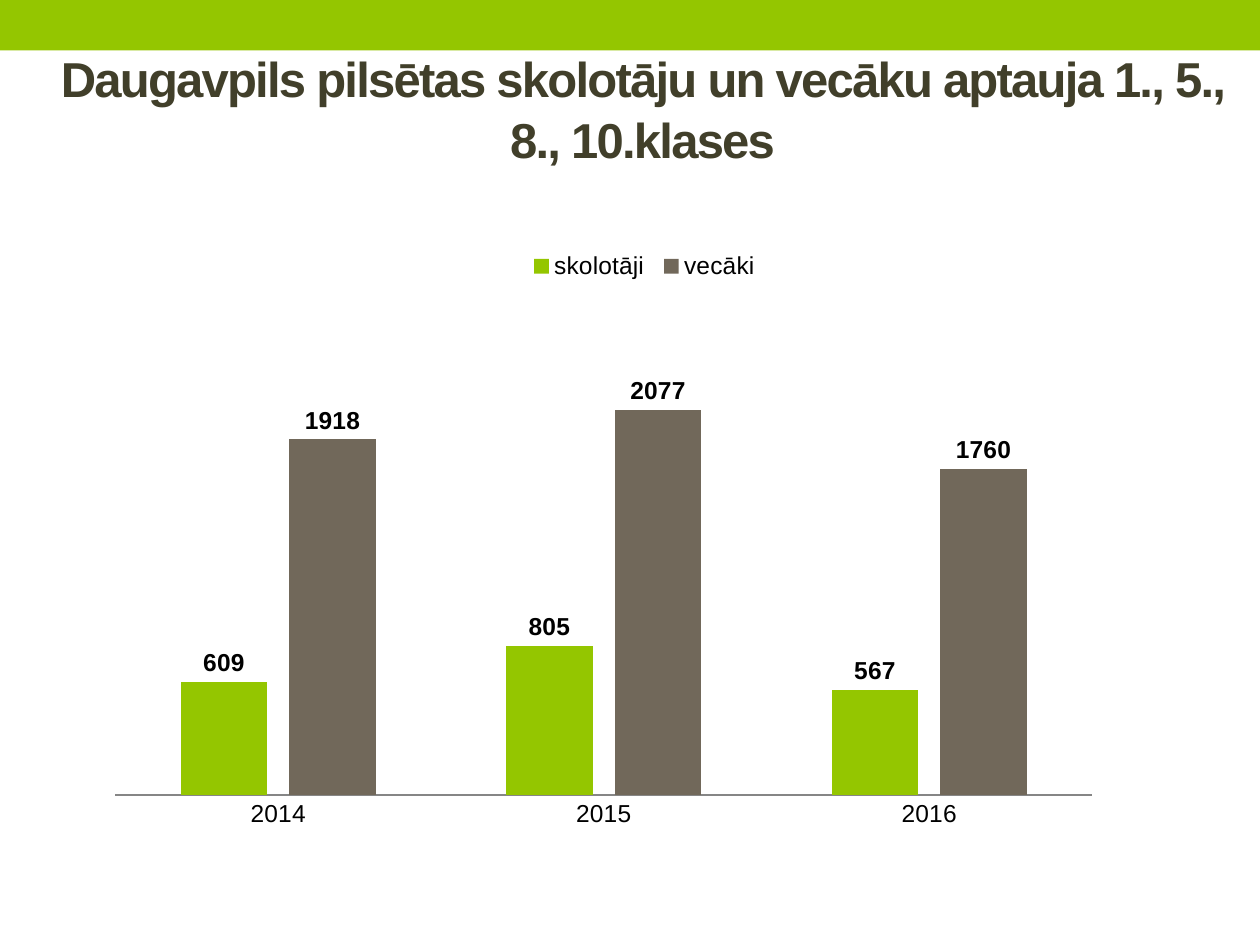
import pptx
import pptx.chart.data
import pptx.dml.color
import pptx.enum.chart
import pptx.enum.shapes
import pptx.enum.text
import pptx.oxml
import pptx.oxml.ns
import pptx.util

Pt = pptx.util.Pt
RGB = pptx.dml.color.RGBColor
GREEN = RGB(0x94, 0xC6, 0x00)
TAUPE = RGB(0x71, 0x68, 0x5A)
OLIVE = RGB(0x41, 0x3F, 0x2A)
GRAY = RGB(0x86, 0x86, 0x86)
BLACK = RGB(0, 0, 0)
FONT = "Arial"

YEARS = ["2014", "2015", "2016"]
SERIES = [("skolotāji", [609, 805, 567], GREEN),
          ("vecāki", [1918, 2077, 1760], TAUPE)]


def format_font(font, size, color=BLACK, bold=False):
    font.name, font.size, font.bold = FONT, Pt(size), bold
    font.color.rgb = color


def add_text(s, box, text, size, color, bold=False, spacing=0, line_spacing=1.0):
    """Add centred text; spacing is the letter spacing in points."""
    tf = s.shapes.add_textbox(*map(Pt, box)).text_frame
    tf.word_wrap = True
    tf.vertical_anchor = pptx.enum.text.MSO_ANCHOR.MIDDLE
    p = tf.paragraphs[0]
    p.alignment = pptx.enum.text.PP_ALIGN.CENTER
    p.line_spacing = line_spacing
    r = p.add_run()
    r.text = text
    format_font(r.font, size, color, bold)
    r.font._element.set("spc", str(int(spacing * 100)))


def add_band(s, box):
    sp = s.shapes.add_shape(pptx.enum.shapes.MSO_SHAPE.RECTANGLE, *map(Pt, box))
    sp.shadow.inherit = False
    sp.fill.solid()
    sp.fill.fore_color.rgb = GREEN
    sp.line.fill.background()


def set_layout(element, x, y, w, h, inner=False):
    """Place a chart part by fractions of the chart's width and height."""
    for old in element.findall(pptx.oxml.ns.qn("c:layout")):
        element.remove(old)
    target = '<c:layoutTarget val="inner"/>' if inner else ""
    layout = pptx.oxml.parse_xml(
        f'<c:layout {pptx.oxml.ns.nsdecls("c")}><c:manualLayout>{target}'
        '<c:xMode val="edge"/><c:yMode val="edge"/>'
        f'<c:x val="{x}"/><c:y val="{y}"/><c:w val="{w}"/><c:h val="{h}"/>'
        '</c:manualLayout></c:layout>')
    # The layout leads the plot area, and follows the legend's position.
    element.insert(0 if inner else 1, layout)


def add_survey_chart(s, box):
    data = pptx.chart.data.CategoryChartData()
    data.categories = YEARS
    for name, values, _ in SERIES:
        data.add_series(name, values)
    chart = s.shapes.add_chart(pptx.enum.chart.XL_CHART_TYPE.COLUMN_CLUSTERED,
                               *map(Pt, box), data).chart
    format_font(chart.font, 10)
    chart.has_title = False

    chart.has_legend = True
    legend = chart.legend
    legend.position = pptx.enum.chart.XL_LEGEND_POSITION.TOP
    legend.include_in_layout = False
    format_font(legend.font, 14)
    set_layout(legend._element, 0.4, 0.05, 0.24, 0.06)

    plot = chart.plots[0]
    plot.gap_width, plot.overlap = 150, -25
    plot.vary_by_categories = False
    for series, (_, _, color) in zip(plot.series, SERIES):
        series.format.fill.solid()
        series.format.fill.fore_color.rgb = color
        labels = series.data_labels
        labels.show_value = True
        labels.position = pptx.enum.chart.XL_LABEL_POSITION.OUTSIDE_END
        format_font(labels.font, 14, bold=True)

    years, counts = chart.category_axis, chart.value_axis
    years.major_tick_mark = pptx.enum.chart.XL_TICK_MARK.NONE
    years.format.line.color.rgb = GRAY
    years.format.line.width = Pt(1)
    format_font(years.tick_labels.font, 14)
    counts.minimum_scale, counts.maximum_scale = 0, 2500
    counts.has_major_gridlines = False
    counts.visible = False
    set_layout(chart._chartSpace.chart.plotArea, 0, 0.18, 0.96, 0.71, inner=True)


def main():
    prs = pptx.Presentation()
    prs.slide_width, prs.slide_height = Pt(720), Pt(540)
    s = prs.slides.add_slide(prs.slide_layouts[6])
    add_band(s, (0, 0, 720, 28.8))
    add_text(s, (14.4, 0, 705.6, 122.4),
             "Daugavpils pilsētas skolotāju un vecāku aptauja 1., 5., 8., 10.klases",
             28, OLIVE, bold=True, spacing=-1, line_spacing=1.05)
    add_survey_chart(s, (65.5, 122.4, 581.8, 373))
    prs.save("out.pptx")


if __name__ == "__main__":
    main()
